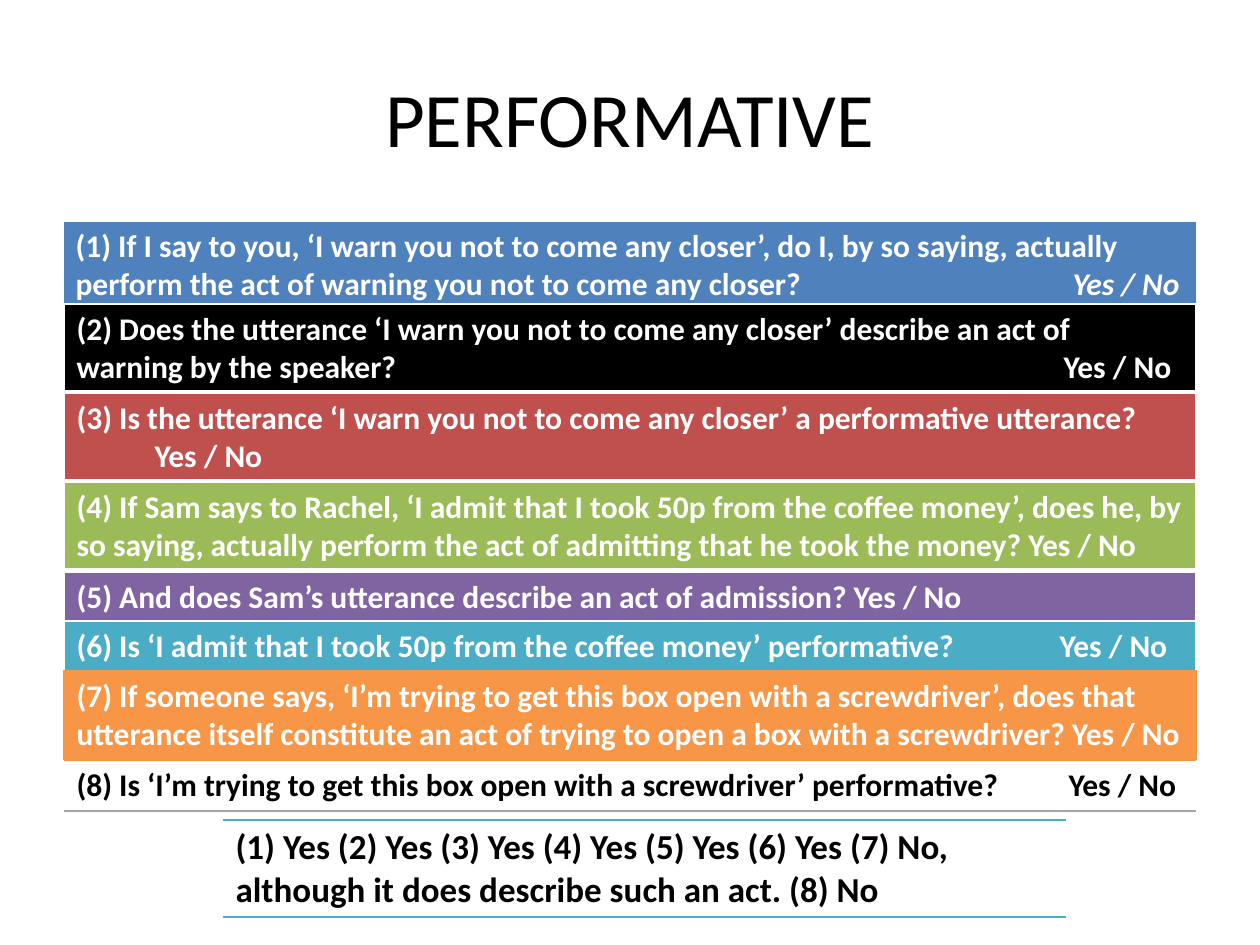
from lxml import etree
from pptx import Presentation
from pptx.dml.color import RGBColor
from pptx.enum.text import MSO_ANCHOR, PP_ALIGN
from pptx.oxml.ns import qn
from pptx.util import Emu, Pt

MIDDLE = MSO_ANCHOR.MIDDLE
CENTER = PP_ALIGN.CENTER
FONT = "Calibri"
EMU_PER_PX = 914400 / 126
COLORS = {
    "white": "FFFFFF", "black": "000000", "blue": "4F81BD", "red": "C0504D",
    "green": "9BBB59", "purple": "8064A2", "aqua": "4BACC6",
    "orange": "F79646", "gray": "A6A6A6",
}


def px(value):
    return Emu(round(value * EMU_PER_PX))


def set_borders(cell, borders):
    """Write left, right, top and bottom lines as (color, points) or None."""
    properties = cell._tc.get_or_add_tcPr()
    for index, (side, border) in enumerate(zip("LRTB", borders)):
        line = etree.Element(qn(f"a:ln{side}"))
        if border:
            color, points = border
            line.set("w", str(Pt(points)))
            solid = etree.SubElement(line, qn("a:solidFill"))
            etree.SubElement(solid, qn("a:srgbClr"), val=COLORS[color])
        else:
            etree.SubElement(line, qn("a:noFill"))
        properties.insert(index, line)


prs = Presentation()
prs.slide_width, prs.slide_height = px(1260), px(945)
slide = prs.slides.add_slide(prs.slide_layouts[6])

# Title
title = slide.shapes.add_textbox(px(63), px(38), px(1134), px(157))
title_frame = title.text_frame
title_frame.word_wrap = True
title_frame.vertical_anchor = MIDDLE
title_frame.text = "PERFORMATIVE"
heading = title_frame.paragraphs[0]
heading.alignment = CENTER
heading.font.size = Pt(44)
heading.font.name = FONT
heading.font.color.rgb = RGBColor.from_string(COLORS["black"])

# Border sets: left, right, top, bottom
thin = ("white", 1)
first_box = (thin, thin, thin, ("black", 1))
white_box = (thin, thin, thin, ("white", 3))
orange_box = (("orange", 1),) * 4
last_rule = (None, None, ("orange", 1), ("gray", 1))
aqua_rules = (None, None, ("aqua", 1), ("aqua", 1))

# One-cell tables: place, fill, borders, text size, question, answer, tab stop
ANSWER = "Yes / No"
bands = [
    ((63, 221, 1134, 88), "blue", first_box, 18,
     "(1) If I say to you, ‘I warn you not to come any closer’, do I, by so saying, "
     "actually perform the act of warning you not to come any closer?\t", ANSWER, 997),
    ((64, 304, 1132, 88), "black", white_box, 18,
     "(2) Does the utterance ‘I warn you not to come any closer’ describe an act of "
     "warning by the speaker?\t", ANSWER, 987),
    ((64, 393, 1132, 88), "red", white_box, 18,
     "(3) Is the utterance ‘I warn you not to come any closer’ a performative "
     "utterance?\v\t", ANSWER, 78),
    ((64, 482, 1132, 88), "green", white_box, 18,
     "(4) If Sam says to Rachel, ‘I admit that I took 50p from the coffee money’, "
     "does he, by so saying, actually perform the act of admitting that he took the "
     "money? ", ANSWER, None),
    ((64, 572, 1132, 51), "purple", white_box, 18,
     "(5) And does Sam’s utterance describe an act of admission? ", ANSWER, None),
    ((64, 621, 1132, 51), "aqua", white_box, 18,
     "(6) Is ‘I admit that I took 50p from the coffee money’ performative?\t",
     ANSWER, 983),
    ((64, 671, 1132, 88), "orange", orange_box, 18,
     "(7) If someone says, ‘I’m trying to get this box open with a screwdriver’, does "
     "that utterance itself constitute an act of trying to open a box with a "
     "screwdriver? ", ANSWER, None),
    ((64, 760, 1132, 51), None, last_rule, 18,
     "(8) Is ‘I’m trying to get this box open with a screwdriver’ performative?\t",
     ANSWER, 992),
    ((223, 820, 843, 97), None, aqua_rules, 20,
     "(1) Yes (2) Yes (3) Yes (4) Yes (5) Yes (6) Yes (7) No, although it does "
     "describe such an act. (8) No", None, None),
]

for number, (place, fill, borders, size, question, answer, stop) in enumerate(bands, 1):
    band = slide.shapes.add_table(1, 1, *map(px, place)).table
    band.first_row = band.horz_banding = False
    cell = band.cell(0, 0)
    if fill:
        cell.fill.solid()
        cell.fill.fore_color.rgb = RGBColor.from_string(COLORS[fill])
    else:
        cell.fill.background()
    set_borders(cell, borders)

    paragraph = cell.text_frame.paragraphs[0]
    paragraph.text = question
    if answer:
        answer_run = paragraph.add_run()
        answer_run.text = answer
        if number == 1:
            answer_run.font.italic = True
    for run in paragraph.runs:
        run.font.name = FONT
        run.font.size = Pt(size)
        run.font.bold = True
        run.font.color.rgb = RGBColor.from_string(COLORS["white" if fill else "black"])

    # The tab stop sets the answer apart from its question
    if stop:
        tabs = etree.SubElement(paragraph._p.get_or_add_pPr(), qn("a:tabLst"))
        etree.SubElement(tabs, qn("a:tab"), pos=str(px(stop)), algn="l")

prs.save("out.pptx")
